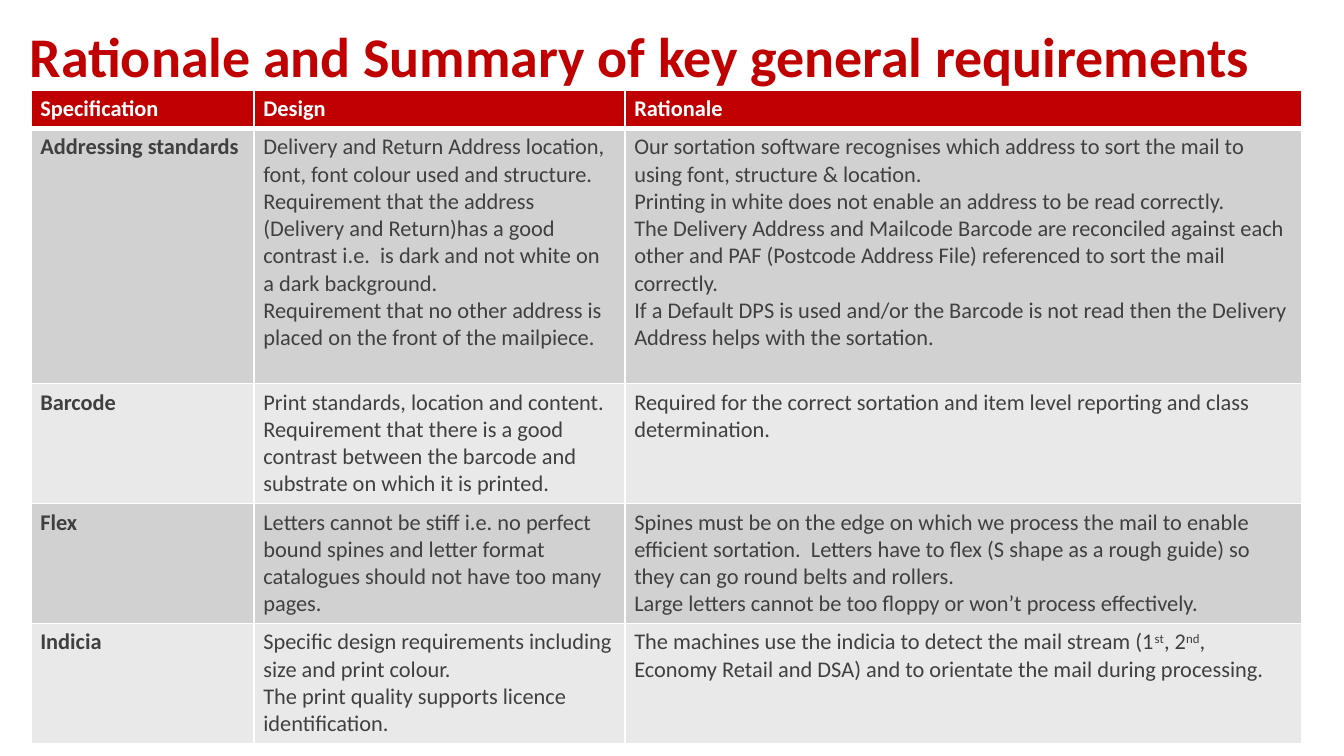
"""Build a slide with a table of mail design requirements and their rationale."""
from lxml.etree import SubElement
from pptx import Presentation
from pptx.dml.color import RGBColor
from pptx.enum.text import MSO_ANCHOR as Anchor, MSO_AUTO_SIZE as AutoSize, PP_ALIGN as Align
from pptx.oxml.ns import qn
from pptx.util import Inches, Pt

THEME = {
    "font": "Calibri", "title_size": 30, "body_size": 12,
    "red": "C00000", "white": "FFFFFF", "text": "404040",
    "bands": ("D1D1D2", "E9E9EA"),
}
TITLE = "Rationale and Summary of key general requirements"
HEADERS = ("Specification", "Design", "Rationale")
REQUIREMENTS = [
    (
        ["Addressing standards"],
        ["Delivery and Return Address location, font, font colour used and structure.",
         "Requirement that the address (Delivery and Return)has a good contrast i.e.  is dark "
         "and not white on a dark background.",
         "Requirement that no other address is placed on the front of the mailpiece."],
        ["Our sortation software recognises which address to sort the mail to using font, "
         "structure & location.",
         "Printing in white does not enable an address to be read correctly.",
         "The Delivery Address and Mailcode Barcode are reconciled against each other and PAF "
         "(Postcode Address File) referenced to sort the mail correctly.",
         "If a Default DPS is used and/or the Barcode is not read then the Delivery Address "
         "helps with the sortation."],
    ),
    (
        ["Barcode"],
        ["Print standards, location and content.",
         "Requirement that there is a good contrast between the barcode and substrate on which "
         "it is printed."],
        ["Required for the correct sortation and item level reporting and class determination."],
    ),
    (
        ["Flex"],
        ["Letters cannot be stiff i.e. no perfect bound spines and letter format catalogues "
         "should not have too many pages."],
        ["Spines must be on the edge on which we process the mail to enable efficient "
         "sortation.  Letters have to flex (S shape as a rough guide) so they can go round "
         "belts and rollers.",
         "Large letters cannot be too floppy or won’t process effectively."],
    ),
    (
        ["Indicia"],
        ["Specific design requirements including size and print colour.",
         "The print quality supports licence identification."],
        [("The machines use the indicia to detect the mail stream (1", "st", ", 2", "nd",
          ", Economy Retail and DSA) and to orientate the mail during processing.")],
    ),
]
COLUMN_WIDTHS = (1.66, 2.76, 5.04)
ROW_HEIGHTS = (0.26, 1.9, 0.89, 0.89, 0.89)
TITLE_LEFT, TABLE_LEFT, TABLE_TOP = 0.22, 0.23, 0.67


def write(frame, paragraphs, size, color, bold=False, spacing=None):
    """Fill a text frame; every second part of a tuple is superscript."""
    for index, parts in enumerate(paragraphs):
        paragraph = frame.paragraphs[0] if index == 0 else frame.add_paragraph()
        paragraph.alignment = Align.LEFT
        if spacing:
            paragraph.line_spacing = spacing
        for position, text in enumerate((parts,) if isinstance(parts, str) else parts):
            run = paragraph.add_run()
            run.text = text
            font = run.font
            font.name, font.size, font.bold = THEME["font"], Pt(size), bold
            font.color.rgb = RGBColor.from_string(color)
            if position % 2:
                run._r.get_or_add_rPr().set("baseline", "30000")


def add_borders(cell, bottom_width):
    """Draw white lines on all four sides of a cell."""
    properties = cell._tc.get_or_add_tcPr()
    for side, width in (("L", 1), ("R", 1), ("T", 1), ("B", bottom_width)):
        line = SubElement(properties, qn(f"a:ln{side}"), w=str(Pt(width)))
        fill = SubElement(line, qn("a:solidFill"))
        SubElement(fill, qn("a:srgbClr"), val=THEME["white"])


def format_cell(cell, paragraphs, fill, color, bold, bottom_width=1):
    """Give a cell its borders, fill, margins and text."""
    add_borders(cell, bottom_width)
    cell.fill.solid()
    cell.fill.fore_color.rgb = RGBColor.from_string(fill)
    cell.margin_left = cell.margin_right = Inches(0.07)
    cell.margin_top = cell.margin_bottom = Inches(0.04)
    write(cell.text_frame, paragraphs, THEME["body_size"], color, bold)


def add_title(slide):
    """Place and format the title placeholder."""
    title = slide.shapes.title
    title.left, title.top = Inches(TITLE_LEFT), Inches(0.26)
    title.width, title.height = Inches(9.55), Inches(0.34)
    frame = title.text_frame
    frame.margin_left = frame.margin_right = frame.margin_top = frame.margin_bottom = 0
    frame.vertical_anchor, frame.auto_size = Anchor.TOP, AutoSize.NONE
    frame.word_wrap = True
    write(frame, [TITLE], THEME["title_size"], THEME["red"], bold=True, spacing=0.8)


def add_requirements(slide):
    """Add the table with a header row and banded body rows."""
    table = slide.shapes.add_table(
        len(ROW_HEIGHTS), len(COLUMN_WIDTHS), Inches(TABLE_LEFT), Inches(TABLE_TOP),
        Inches(sum(COLUMN_WIDTHS)), Inches(sum(ROW_HEIGHTS))).table
    for column, width in zip(table.columns, COLUMN_WIDTHS):
        column.width = Inches(width)
    for row, height in zip(table.rows, ROW_HEIGHTS):
        row.height = Inches(height)
    for column, header in enumerate(HEADERS):
        format_cell(table.cell(0, column), [header], THEME["red"], THEME["white"], True, 3)
    for row, requirement in enumerate(REQUIREMENTS):
        for column, paragraphs in enumerate(requirement):
            format_cell(table.cell(row + 1, column), paragraphs, THEME["bands"][row % 2],
                        THEME["text"], column == 0)


def main():
    """Create and save the presentation."""
    presentation = Presentation()
    presentation.slide_width = Inches(10)
    presentation.slide_height = presentation.slide_width * 9 // 16
    slide = presentation.slides.add_slide(presentation.slide_layouts[5])
    add_title(slide)
    add_requirements(slide)
    presentation.save("out.pptx")


if __name__ == "__main__":
    main()
